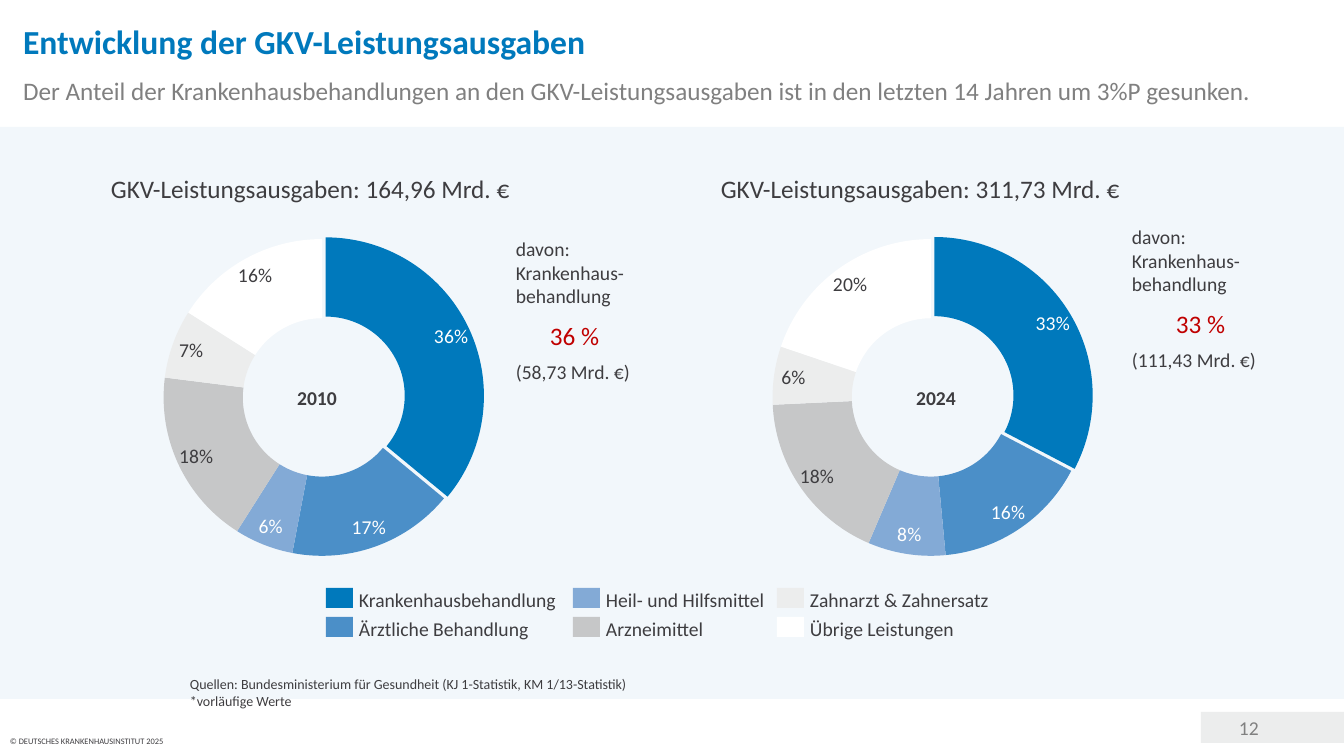
"""Build the slide on statutory health insurance spending with two doughnut charts."""
from math import cos, pi, sin

from pptx import Presentation
from pptx.chart.data import CategoryChartData
from pptx.dml.color import RGBColor
from pptx.enum.chart import XL_CHART_TYPE
from pptx.enum.shapes import MSO_SHAPE
from pptx.enum.text import MSO_ANCHOR, PP_ALIGN
from pptx.oxml import parse_xml
from pptx.oxml.ns import nsdecls
from pptx.util import Emu, Pt

DOUGHNUT = XL_CHART_TYPE.DOUGHNUT
RECTANGLE = MSO_SHAPE.RECTANGLE
TOP, MIDDLE = MSO_ANCHOR.TOP, MSO_ANCHOR.MIDDLE
LEFT, CENTER = PP_ALIGN.LEFT, PP_ALIGN.CENTER

FONT = "Calibri"
BLUE = RGBColor(0x00, 0x79, 0xBC)
MID_BLUE = RGBColor(0x4B, 0x8F, 0xC8)
LIGHT_BLUE = RGBColor(0x83, 0xAA, 0xD6)
SILVER = RGBColor(0xC6, 0xC7, 0xC8)
PALE = RGBColor(0xEC, 0xED, 0xED)
WHITE = RGBColor(0xFF, 0xFF, 0xFF)
DARK = RGBColor(0x3E, 0x3D, 0x40)
GREY = RGBColor(0x80, 0x80, 0x80)
RED = RGBColor(0xC0, 0x00, 0x00)

CHART_WIDTH, CHART_HEIGHT = 396, 401
LABEL_PUSH = 20
CATEGORIES = [
    ("Krankenhausbehandlung", BLUE, WHITE),
    ("Ärztliche Behandlung", MID_BLUE, WHITE),
    ("Heil- und Hilfsmittel", LIGHT_BLUE, WHITE),
    ("Arzneimittel", SILVER, DARK),
    ("Zahnarzt & Zahnersatz", PALE, DARK),
    ("Übrige Leistungen", WHITE, DARK),
]
YEARS = [
    ("2010", "164,96", "36 %", "58,73", (36, 17, 6, 18, 7, 16),
     124, (101, 168, 462, 47), (506, 232, 137, 163), (260, 381, 114, 34)),
    ("2024", "311,73", "33 %", "111,43", (33, 16, 8, 18, 6, 20),
     733, (711, 168, 462, 47), (1122, 220, 157, 163), (879, 381, 114, 34)),
]


def px(*lengths):
    """Turn pixel lengths into EMU."""
    return [Emu(round(length * 914400 / 100.8)) for length in lengths]


def write(frame, text, size=14, color=DARK, bold=False, align=LEFT, before=0,
          anchor=TOP):
    """Add one formatted paragraph to a text frame."""
    para = frame.paragraphs[0] if not frame.text else frame.add_paragraph()
    span = para.add_run()
    span.text = text
    span.font.name = FONT
    span.font.size = Pt(size)
    span.font.bold = bold
    span.font.color.rgb = color
    para.alignment = align
    para.space_before = Pt(before)
    frame.word_wrap = True
    frame.vertical_anchor = anchor
    return para


deck = Presentation()
deck.slide_width, deck.slide_height = px(1344, 756)
page = deck.slides.add_slide(deck.slide_layouts[1])
shapes = page.shapes

title, subtitle = page.placeholders
title.left, title.top, title.width, title.height = px(13, 15, 1159, 52)
subtitle.left, subtitle.top, subtitle.width, subtitle.height = px(13, 70, 1301, 47)
write(title.text_frame, "Entwicklung der GKV-Leistungsausgaben", size=24,
      color=BLUE, bold=True, anchor=MIDDLE)
para = write(subtitle.text_frame,
             "Der Anteil der Krankenhausbehandlungen an den GKV-Leistungsausgaben "
             "ist in den letzten 14 Jahren um 3%P gesunken.", size=18, color=GREY)
properties = para._p.get_or_add_pPr()
properties.set("marL", "0")
properties.set("indent", "0")
properties.append(parse_xml(f"<a:buNone {nsdecls('a')}/>"))

rectangles = [((1201, 712, 143, 31), PALE), ((0, 127, 1344, 572), MID_BLUE)]
for index, (category, color, label_color) in enumerate(CATEGORIES):
    column, row = divmod(index, 2)
    left, top = (326, 573, 777)[column], 588 + 29 * row
    rectangles.append(((left, top, 27, 20), color))
for place, color in rectangles:
    box = shapes.add_shape(RECTANGLE, *px(*place))
    box.shadow.inherit = False
    box.fill.solid()
    box.fill.fore_color.rgb = color
    box.line.fill.background()
    if place[0] == 0:
        tint = box.fill._xPr.find(".//{*}srgbClr")
        tint.append(parse_xml(f'<a:alpha {nsdecls("a")} val="7000"/>'))

for (category, color, label_color), (place, swatch) in zip(CATEGORIES, rectangles[2:]):
    left, top = place[:2]
    frame = shapes.add_textbox(*px(left + 33, top, 205, 24)).text_frame
    frame.margin_left = frame.margin_right = frame.margin_top = frame.margin_bottom = 0
    write(frame, category, anchor=MIDDLE)

for year, total, share, amount, values, left, heading, note, center in YEARS:
    data = CategoryChartData(number_format='0"%"')
    data.categories = [str(number) for number in range(1, 7)]
    data.add_series("Series 1", values)
    chart = shapes.add_chart(
        DOUGHNUT, *px(left, 195, CHART_WIDTH, CHART_HEIGHT), data).chart
    chart.has_title = False
    chart.has_legend = False
    chart.font.name = FONT
    chart.font.size = Pt(10)
    chart.font.color.rgb = DARK
    plot = chart.plots[0]
    plot.vary_by_categories = True
    points = plot.series[0].points
    for index, (category, color, label_color) in enumerate(CATEGORIES):
        point = points[index]
        point.format.fill.solid()
        point.format.fill.fore_color.rgb = color
        point.format.line.fill.background()
        font = point.data_label.font
        font.name = FONT
        font.size = Pt(14)
        font.color.rgb = label_color

    root = chart.element
    area = root.xpath("//c:plotArea")[0]
    for layout in area.findall("{*}layout"):
        area.remove(layout)
    area.insert(0, parse_xml(
        f'<c:layout {nsdecls("c")}><c:manualLayout><c:layoutTarget val="inner"/>'
        '<c:xMode val="edge"/><c:yMode val="edge"/><c:x val="0.1"/><c:y val="0.11"/>'
        '<c:w val="0.8"/><c:h val="0.79"/></c:manualLayout></c:layout>'))
    root.xpath("//c:dPt/c:spPr")[0].addprevious(
        parse_xml(f'<c:explosion {nsdecls("c")} val="5"/>'))
    for index, label in enumerate(root.xpath("//c:dLbl")):
        angle = 2 * pi * (sum(values[:index]) + values[index] / 2) / sum(values)
        shift_x = LABEL_PUSH * sin(angle) / CHART_WIDTH
        shift_y = -LABEL_PUSH * cos(angle) / CHART_HEIGHT
        label.insert(1, parse_xml(
            f'<c:numFmt {nsdecls("c")} formatCode="0&quot;%&quot;" sourceLinked="0"/>'))
        label.insert(1, parse_xml(
            f'<c:layout {nsdecls("c")}><c:manualLayout><c:x val="{shift_x:.3f}"/>'
            f'<c:y val="{shift_y:.3f}"/></c:manualLayout></c:layout>'))

    write(shapes.add_textbox(*px(*heading)).text_frame,
          f"GKV-Leistungsausgaben: {total} Mrd. €", size=18)
    write(shapes.add_textbox(*px(*center)).text_frame, year, bold=True, align=CENTER)
    frame = shapes.add_textbox(*px(*note)).text_frame
    write(frame, "davon: Krankenhaus-behandlung")
    write(frame, share, size=18, color=RED, align=CENTER, before=9)
    write(frame, f"({amount} Mrd. €)", before=7)

frame = shapes.add_textbox(*px(180, 671, 926, 40)).text_frame
write(frame, "Quellen: Bundesministerium für Gesundheit (KJ 1-Statistik, KM 1/13-Statistik)",
      size=10)
write(frame, "*vorläufige Werte", size=10)
write(shapes.add_textbox(*px(1229, 711, 60, 34)).text_frame, "12", color=GREY)
write(shapes.add_textbox(*px(0, 731, 318, 24)).text_frame,
      "© DEUTSCHES KRANKENHAUSINSTITUT 2025", size=6)

deck.save("out.pptx")
